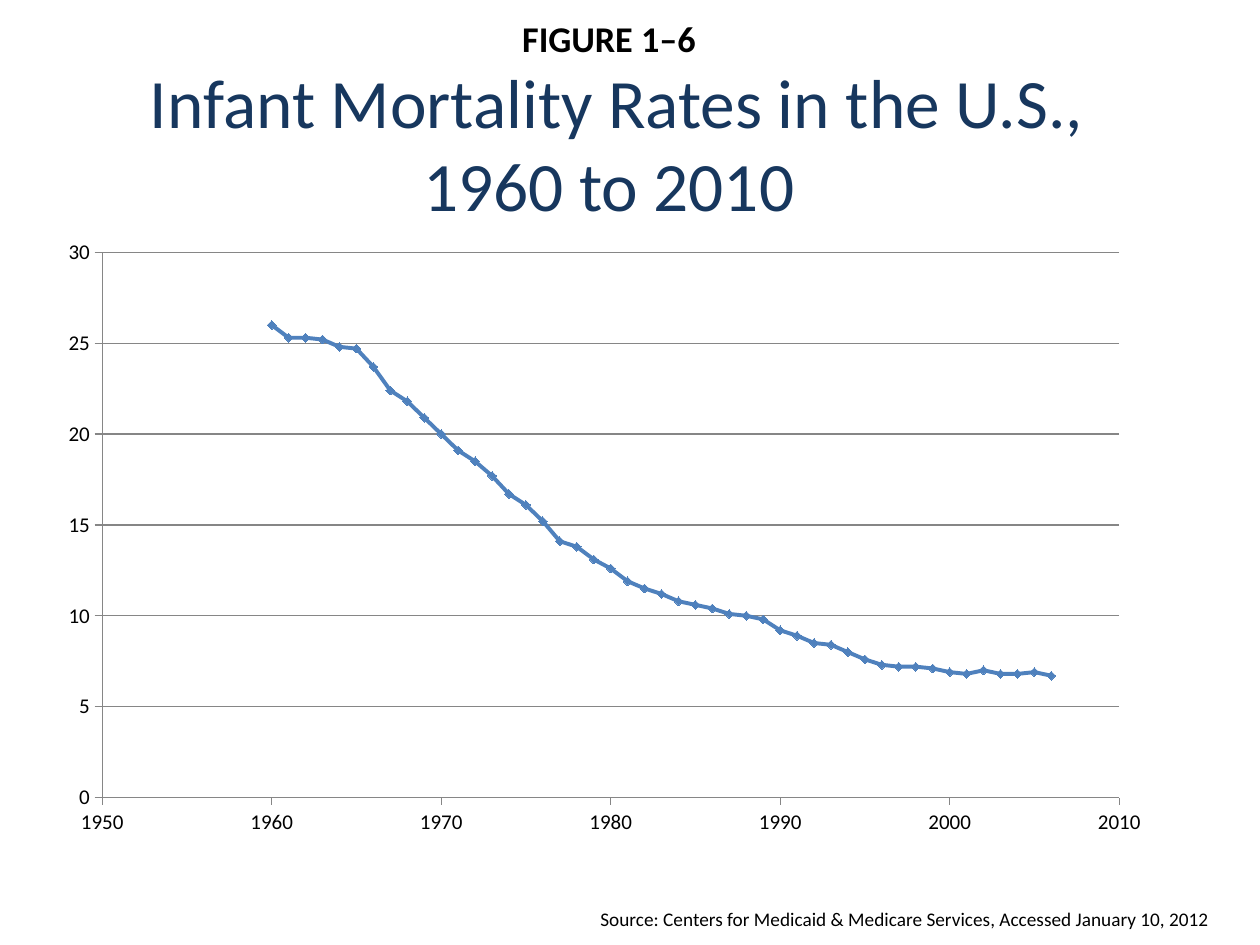
import pptx
import pptx.chart.data
import pptx.dml.color
import pptx.enum.chart
import pptx.enum.text
import pptx.oxml
import pptx.oxml.ns
import pptx.util

Pt = pptx.util.Pt
FONT = "Calibri"
FIRST_YEAR = 1960
RATES = [
    26, 25.3, 25.3, 25.2, 24.8, 24.7, 23.7, 22.4, 21.8, 20.9,
    20, 19.1, 18.5, 17.7, 16.7, 16.1, 15.2, 14.1, 13.8, 13.1,
    12.6, 11.9, 11.5, 11.2, 10.8, 10.6, 10.4, 10.1, 10, 9.8,
    9.2, 8.9, 8.5, 8.4, 8, 7.6, 7.3, 7.2, 7.2, 7.1,
    6.9, 6.8, 7, 6.8, 6.8, 6.9, 6.7,
]


def color(value):
    """Return the colour for a hex string."""
    return pptx.dml.color.RGBColor.from_string(value)


def style_font(font, size, value, bold=False):
    """Set typeface, size, colour and weight of a font."""
    font.name = FONT
    font.size = Pt(size)
    font.bold = bold
    font.color.rgb = color(value)


def place_title(page, left, top, width, height):
    """Fill the title placeholder with the figure number and heading."""
    box = page.shapes.title
    box.left, box.top, box.width, box.height = map(Pt, (left, top, width, height))
    frame = box.text_frame
    frame.word_wrap = True
    frame.auto_size = pptx.enum.text.MSO_AUTO_SIZE.NONE
    frame.vertical_anchor = pptx.enum.text.MSO_ANCHOR.MIDDLE
    para = frame.paragraphs[0]
    para.alignment = pptx.enum.text.PP_ALIGN.CENTER
    number = para.add_run()
    number.text = "FIGURE 1–6"
    style_font(number.font, 20.7, "000000", bold=True)
    para.add_line_break()
    heading = para.add_run()
    heading.text = " Infant Mortality Rates in the U.S., 1960 to 2010"
    style_font(heading.font, 39.6, "17375E")


def format_axis(axis, low, high, step, gridlines):
    """Set the scale, ticks and lines of one axis."""
    axis.minimum_scale, axis.maximum_scale, axis.major_unit = low, high, step
    axis.major_tick_mark = pptx.enum.chart.XL_TICK_MARK.OUTSIDE
    axis.minor_tick_mark = pptx.enum.chart.XL_TICK_MARK.NONE
    axis.tick_labels.number_format = "General"
    axis.tick_labels.number_format_is_linked = False
    axis.has_major_gridlines = gridlines
    lines = [axis.format.line]
    if gridlines:
        lines.append(axis.major_gridlines.format.line)
    for line in lines:
        line.color.rgb = color("868686")
        line.width = Pt(0.75)


def set_plot_layout(chart, x, y, w, h):
    """Fix the inner plot area as fractions of the chart."""
    plot_area = chart.plots[0]._element.getparent()
    for layout in plot_area.findall(pptx.oxml.ns.qn("c:layout")):
        plot_area.remove(layout)
    modes = '<c:layoutTarget val="inner"/><c:xMode val="edge"/><c:yMode val="edge"/>'
    sizes = f'<c:x val="{x}"/><c:y val="{y}"/><c:w val="{w}"/><c:h val="{h}"/>'
    plot_area.insert(0, pptx.oxml.parse_xml(
        f'<c:layout {pptx.oxml.ns.nsdecls("c")}>'
        f"<c:manualLayout>{modes}{sizes}</c:manualLayout></c:layout>"
    ))


def place_chart(page, left, top, width, height):
    """Draw the yearly mortality rates as a scatter chart with lines."""
    data = pptx.chart.data.XyChartData()
    points = data.add_series("Series 1")
    for year, rate in enumerate(RATES, FIRST_YEAR):
        points.add_data_point(year, rate)
    chart = page.shapes.add_chart(
        pptx.enum.chart.XL_CHART_TYPE.XY_SCATTER_LINES,
        *map(Pt, (left, top, width, height)), data,
    ).chart
    chart.has_title = False
    chart.has_legend = False
    style_font(chart.font, 12, "000000")
    chart.plots[0].vary_by_categories = False
    format_axis(chart.category_axis, 1950, 2010, 10, False)
    format_axis(chart.value_axis, 0, 30, 5, True)
    series = chart.plots[0].series[0]
    series.smooth = False
    series.format.line.color.rgb = color("4F81BD")
    series.format.line.width = Pt(2.25)
    marker = series.marker
    marker.style = pptx.enum.chart.XL_MARKER_STYLE.DIAMOND
    marker.size = 5
    marker.format.fill.solid()
    marker.format.fill.fore_color.rgb = color("4F81BD")
    marker.format.line.color.rgb = color("4F81BD")
    set_plot_layout(chart, 0.064, 0.148, 0.888, 0.741)


def place_source(page, left, top, width, height):
    """Write the source line."""
    box = page.shapes.add_textbox(*map(Pt, (left, top, width, height)))
    box.text_frame.word_wrap = True
    para = box.text_frame.paragraphs[0]
    para.text = "Source: Centers for Medicaid & Medicare Services, Accessed January 10, 2012"
    style_font(para.font, 11, "000000")


def main():
    """Build the deck and save it."""
    deck = pptx.Presentation()
    deck.slide_width, deck.slide_height = Pt(720), Pt(540)
    page = deck.slides.add_slide(deck.slide_layouts[5])
    page.background.fill.solid()
    page.background.fill.fore_color.rgb = color("FFFFFF")
    place_title(page, 30, 24, 636, 90)
    place_chart(page, 16.5, 82, 654.5, 420.5)
    place_source(page, 336, 515, 402, 37.5)
    deck.save("out.pptx")


if __name__ == "__main__":
    main()
